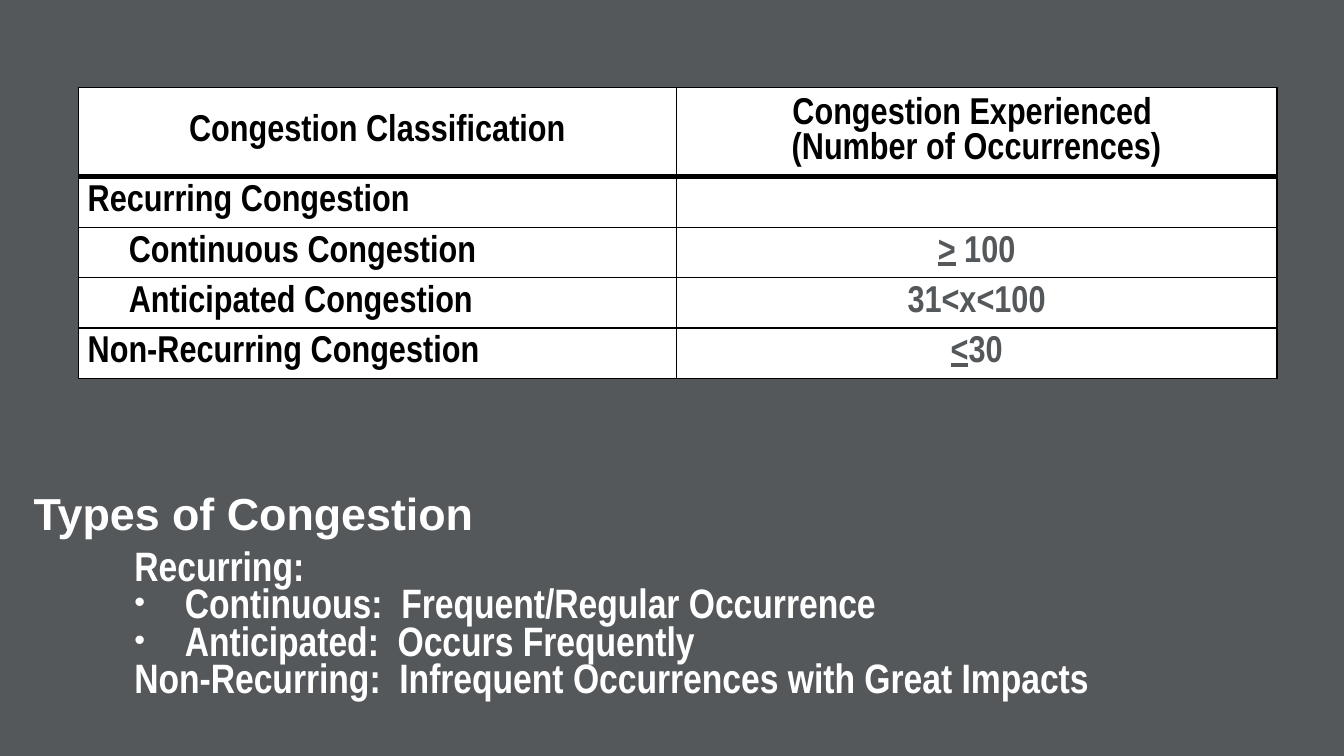
"""Builds a slide that classifies types of traffic congestion."""
import pptx
import pptx.dml.color
import pptx.enum.text
import pptx.oxml
import pptx.oxml.ns
import pptx.util

Pt = pptx.util.Pt
PP_ALIGN = pptx.enum.text.PP_ALIGN
MSO_ANCHOR = pptx.enum.text.MSO_ANCHOR

COLORS = {"slate": "54585A", "white": "FFFFFF", "black": "000000"}
HEADERS = [["Congestion Classification"],
           ["Congestion Experienced ", "(Number of Occurrences)"]]
# Label, left indent, underlined sign, rest of the value
ROWS = [
    ("Recurring Congestion", 0, "", ""),
    ("Continuous Congestion", 22, ">", " 100"),
    ("Anticipated Congestion", 22, "", "31<x<100"),
    ("Non-Recurring Congestion", 0, "<", "30"),
]
NOTES = [
    ("Recurring:", False),
    ("Continuous:  Frequent/Regular Occurrence", True),
    ("Anticipated:  Occurs Frequently", True),
    ("Non-Recurring:  Infrequent Occurrences with Great Impacts", False),
]


def rgb(name):
    return pptx.dml.color.RGBColor.from_string(COLORS[name])


def format_font(font, size, color, name="Arial Narrow"):
    font.name, font.size, font.bold = name, Pt(size), True
    font.color.rgb = rgb(color)


def set_frame(tf, anchor):
    tf.word_wrap = True
    tf.auto_size = pptx.enum.text.MSO_AUTO_SIZE.NONE
    tf.vertical_anchor = anchor
    tf.margin_left = tf.margin_right = Pt(18)
    tf.margin_top = tf.margin_bottom = Pt(3.6)


def add_borders(cell, widths):
    tcPr = cell._tc.get_or_add_tcPr()
    for side, width in zip("LRTB", widths):
        tcPr.append(pptx.oxml.parse_xml(
            f'<a:ln{side} {pptx.oxml.ns.nsdecls("a")} w="{Pt(width)}">'
            f'<a:solidFill><a:srgbClr val="{COLORS["black"]}"/></a:solidFill>'
            f'</a:ln{side}>'))


def format_cell(cell, row):
    add_borders(cell, (1, 1, 3 if row == 1 else 1, 3 if row == 0 else 1))
    cell.fill.solid()
    cell.fill.fore_color.rgb = rgb("white")
    cell.vertical_anchor = MSO_ANCHOR.MIDDLE
    cell.margin_left = cell.margin_right = Pt(5)
    cell.margin_top = cell.margin_bottom = 0


def fill_cell(cell, lines, color, align, indent=0):
    cell.text_frame.text = "\n".join(lines)
    for p in cell.text_frame.paragraphs:
        p.alignment = align
        if indent:
            pPr = p._p.get_or_add_pPr()
            pPr.set("marL", "0")
            pPr.set("indent", str(Pt(indent)))
        for r in p.runs:
            format_font(r.font, 20, color)


def fill_value(cell, sign, rest):
    fill_cell(cell, [sign or rest], "slate", PP_ALIGN.CENTER)
    if sign:
        p = cell.text_frame.paragraphs[0]
        p.runs[0].font.underline = True
        r = p.add_run()
        r.text = rest
        format_font(r.font, 20, "slate")


def add_congestion_table(s):
    frame = s.shapes.add_table(len(ROWS) + 1, 2, Pt(42), Pt(46.8), Pt(642), Pt(156))
    table = frame.table
    table.first_row = table.horz_banding = False
    for column, width in zip(table.columns, (320.4, 321.6)):
        column.width = Pt(width)
    for i, row in enumerate(table.rows):
        row.height = Pt(27 if i else 48)
        for cell in row.cells:
            format_cell(cell, i)
    for j, lines in enumerate(HEADERS):
        fill_cell(table.cell(0, j), lines, "black", PP_ALIGN.CENTER)
    for i, (label, indent, sign, rest) in enumerate(ROWS, 1):
        fill_cell(table.cell(i, 0), [label], "black", PP_ALIGN.LEFT, indent)
        if rest:
            fill_value(table.cell(i, 1), sign, rest)


def add_bullet(p):
    pPr = p._p.get_or_add_pPr()
    pPr.set("marL", str(Pt(27)))
    pPr.set("indent", str(Pt(-27)))
    for tag in ('buSzPct val="75000"', 'buFont typeface="Arial"', 'buChar char="•"'):
        pPr.append(pptx.oxml.parse_xml(f'<a:{tag} {pptx.oxml.ns.nsdecls("a")}/>'))


def add_notes(s):
    sp = s.shapes.add_textbox(Pt(54), Pt(292.3), Pt(588), Pt(103))
    tf = sp.text_frame
    set_frame(tf, MSO_ANCHOR.TOP)
    tf.text = "\n".join(text for text, _ in NOTES)
    for p, (_, bulleted) in zip(tf.paragraphs, NOTES):
        p.line_spacing = Pt(20)
        format_font(p.runs[0].font, 22, "white")
        if bulleted:
            add_bullet(p)


def set_title(s, text):
    sp = s.shapes.title
    sp.left, sp.top, sp.width, sp.height = 0, Pt(226.8), Pt(720), Pt(66)
    tf = sp.text_frame
    set_frame(tf, MSO_ANCHOR.BOTTOM)
    tf.text = text
    p = tf.paragraphs[0]
    p.alignment = PP_ALIGN.LEFT
    p.line_spacing = Pt(26)
    format_font(p.runs[0].font, 24, "white", "Arial")


def main():
    prs = pptx.Presentation()
    prs.slide_width, prs.slide_height = Pt(720), Pt(405)
    s = prs.slides.add_slide(prs.slide_layouts[5])
    s.background.fill.solid()
    s.background.fill.fore_color.rgb = rgb("slate")
    add_congestion_table(s)
    add_notes(s)
    set_title(s, "Types of Congestion")
    prs.save("out.pptx")


if __name__ == "__main__":
    main()
